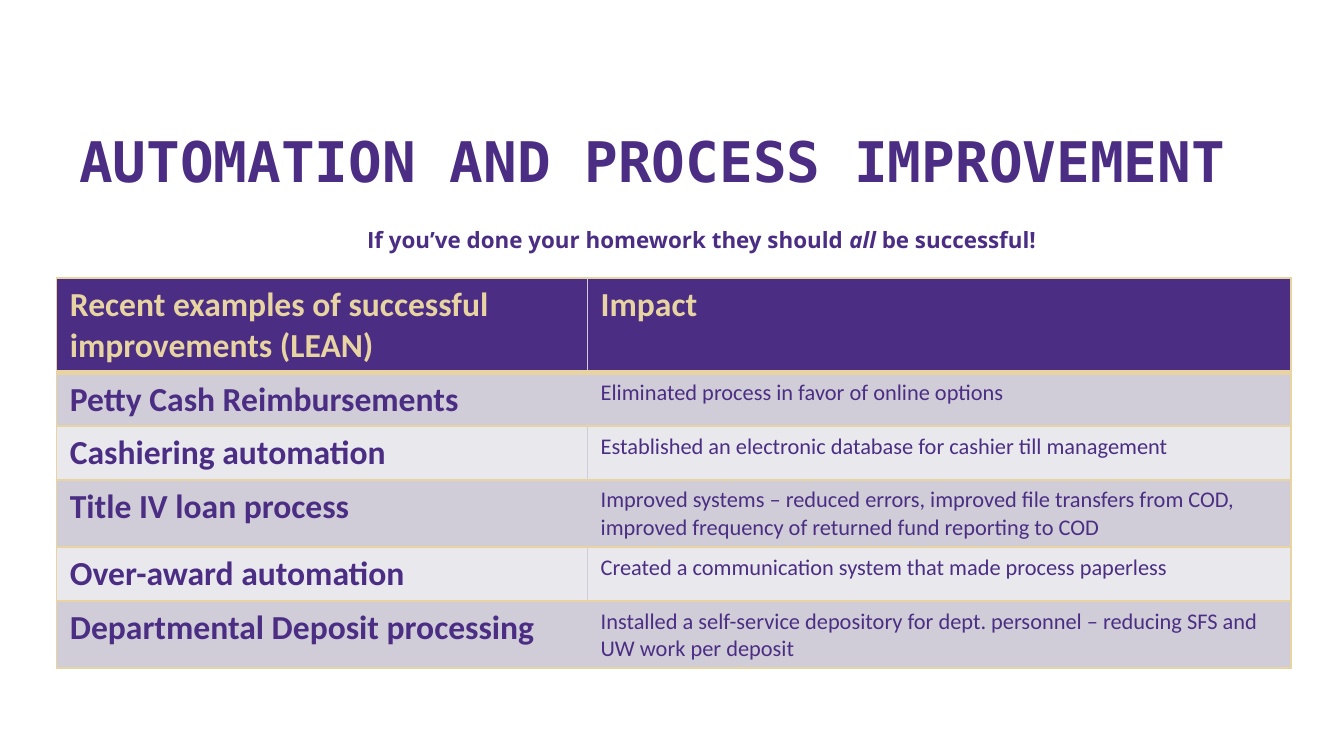
from dataclasses import dataclass

from lxml import etree
from pptx import Presentation
from pptx.dml.color import RGBColor
from pptx.enum.text import MSO_ANCHOR, PP_ALIGN
from pptx.oxml.ns import qn
from pptx.util import Inches, Pt

BOTTOM, TOP = MSO_ANCHOR.BOTTOM, MSO_ANCHOR.TOP
CENTER, LEFT = PP_ALIGN.CENTER, PP_ALIGN.LEFT

# Widescreen slide on a square grid of 100 columns
SLIDE_W = Inches(10)
SLIDE_H = SLIDE_W * 9 // 16
UNIT = SLIDE_W // 100


@dataclass(frozen=True)
class Theme:
    purple: str = "4B2E83"
    gold: str = "E8D3A2"
    bands: tuple = ("D0CDD9", "E9E8ED")
    divider: str = "D0CDD9"
    title_font: str = "DejaVu Sans Mono"
    lead_font: str = "Open Sans"
    table_font: str = "Calibri"
    title_size: float = 30
    heading_size: float = 18
    body_size: float = 12
    line: float = 1
    header_line: float = 3
    divider_line: float = 0.5


THEME = Theme()

TITLE = "AUTOMATION AND PROCESS IMPROVEMENT"
LEAD = [("If you’ve done your homework they should ", False),
        ("all", True),
        (" be successful!", False)]
IMPROVEMENTS = [
    ("Recent examples of successful improvements (LEAN)", "Impact"),
    ("Petty Cash Reimbursements",
     "Eliminated process in favor of online options"),
    ("Cashiering automation",
     "Established an electronic database for cashier till management"),
    ("Title IV loan process",
     "Improved systems – reduced errors, improved file transfers from COD, "
     "improved frequency of returned fund reporting to COD"),
    ("Over-award automation",
     "Created a communication system that made process paperless"),
    ("Departmental Deposit processing",
     "Installed a self-service depository for dept. personnel – reducing SFS "
     "and UW work per deposit"),
]
COLUMN_SHARES = (0.43, 0.57)
ROW_UNITS = (7, 4, 4, 5, 4, 5)


def box(left, top, width, height):
    """Turn grid columns and rows into lengths."""
    return [int(n * UNIT) for n in (left, top, width, height)]


def style(run, font, size, color, bold=True, italic=False):
    run.font.name = font
    run.font.size = Pt(size)
    run.font.color.rgb = RGBColor.from_string(color)
    run.font.bold = bold
    run.font.italic = italic


def add_text(s, area, pieces, font, size, anchor, align, indent=0):
    tf = s.shapes.add_textbox(*area).text_frame
    tf.word_wrap = True
    tf.vertical_anchor = anchor
    p = tf.paragraphs[0]
    p.alignment = align
    if indent:
        p._p.get_or_add_pPr().set("marL", str(indent * UNIT))
    for text, italic in pieces:
        r = p.add_run()
        r.text = text
        style(r, font, size, THEME.purple, italic=italic)


def add_heading(s, area):
    add_text(s, area, [(TITLE, False)], THEME.title_font, THEME.title_size,
             BOTTOM, LEFT)


def add_lead(s, area):
    add_text(s, area, LEAD, THEME.lead_font, THEME.body_size,
             TOP, CENTER, indent=5)


def set_border(cell, side, color, width):
    line = etree.SubElement(cell._tc.get_or_add_tcPr(), qn(f"a:ln{side}"),
                            w=str(Pt(width)))
    fill = etree.SubElement(line, qn("a:solidFill"))
    etree.SubElement(fill, qn("a:srgbClr"), val=color)


def format_cell(cell, text, row, col):
    header = row == 0
    first, last = col == 0, col == len(COLUMN_SHARES) - 1
    outer = (THEME.gold, THEME.line)
    inner = (THEME.divider, THEME.divider_line)
    heavy = (THEME.gold, THEME.header_line)

    # Borders come before the fill in the cell properties
    set_border(cell, "L", *(outer if first else inner))
    set_border(cell, "R", *(outer if last else inner))
    set_border(cell, "T", *(heavy if row == 1 else outer))
    set_border(cell, "B", *(heavy if header else outer))
    cell.fill.solid()
    cell.fill.fore_color.rgb = RGBColor.from_string(
        THEME.purple if header else THEME.bands[(row - 1) % 2])

    strong = header or first
    cell.text_frame.text = text
    style(cell.text_frame.paragraphs[0].runs[0], THEME.table_font,
          THEME.heading_size if strong else THEME.body_size,
          THEME.gold if header else THEME.purple, bold=strong)


def add_improvements(s, area):
    width, height = area[2:]
    table = s.shapes.add_table(len(IMPROVEMENTS), len(COLUMN_SHARES),
                               *area).table
    for column, share in zip(table.columns, COLUMN_SHARES):
        column.width = int(width * share)
    for row, units in zip(table.rows, ROW_UNITS):
        row.height = height * units // sum(ROW_UNITS)
    for i, entry in enumerate(IMPROVEMENTS):
        for j, text in enumerate(entry):
            format_cell(table.cell(i, j), text, i, j)


def main():
    prs = Presentation()
    prs.slide_width, prs.slide_height = SLIDE_W, SLIDE_H
    s = prs.slides.add_slide(prs.slide_layouts[6])

    # Lead sentence, title, then the table in front
    add_lead(s, box(4.9, 16.35, 89.6, 32.6))
    add_heading(s, box(4.9, 4, 89.6, 10.9))
    add_improvements(s, box(4.2, 20.7, 91.85, 29))

    prs.save("out.pptx")


if __name__ == "__main__":
    main()
